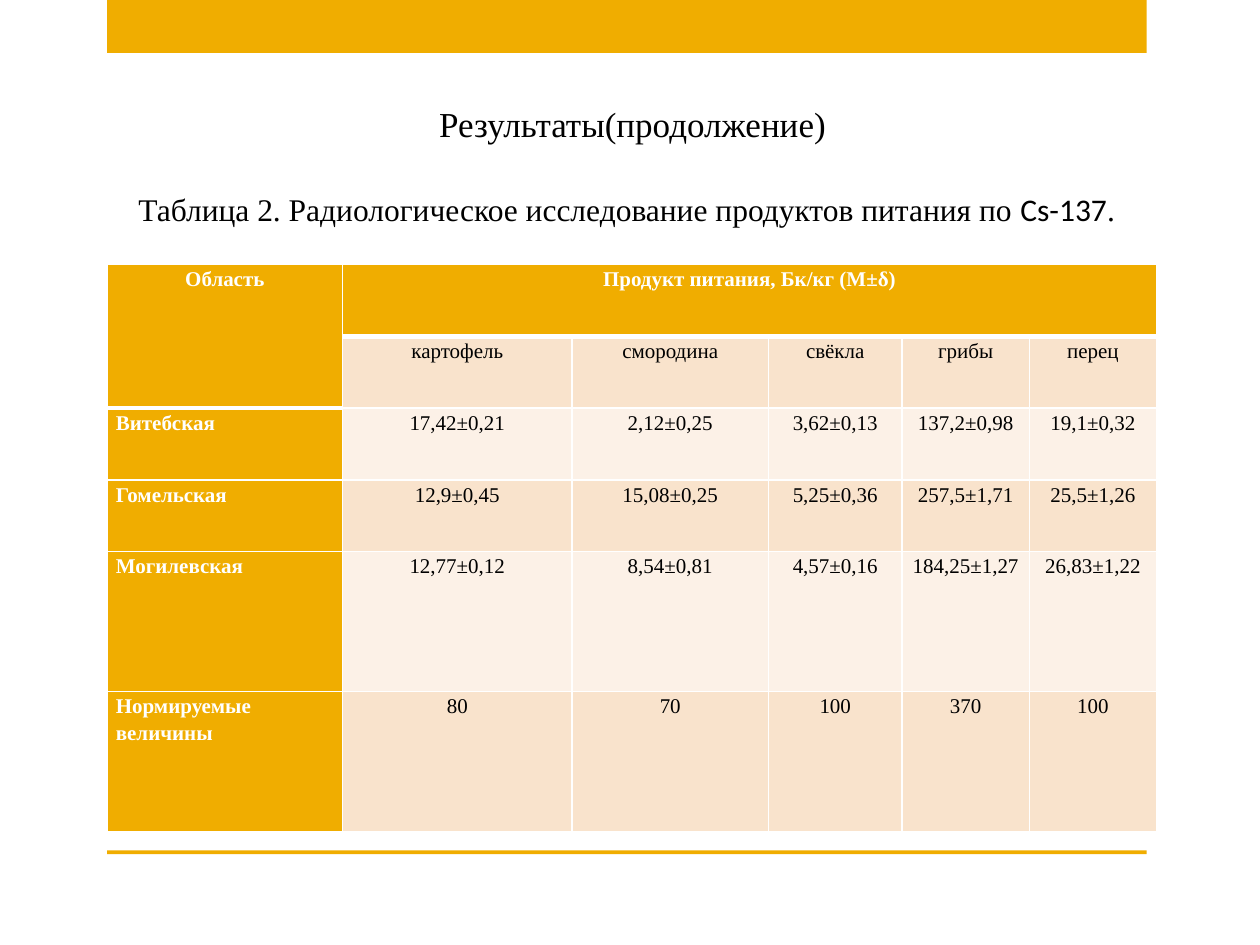
"""Build a slide with a table of radiological test results for food products."""
from lxml import etree
from pptx import Presentation
from pptx.dml.color import RGBColor
from pptx.enum.shapes import MSO_SHAPE
from pptx.enum.text import MSO_ANCHOR, MSO_AUTO_SIZE, PP_ALIGN
from pptx.oxml.ns import qn
from pptx.util import Inches, Pt

RECTANGLE = MSO_SHAPE.RECTANGLE
TOP, MIDDLE = MSO_ANCHOR.TOP, MSO_ANCHOR.MIDDLE
CENTER, JUSTIFY = PP_ALIGN.CENTER, PP_ALIGN.JUSTIFY
FIT_SHAPE = MSO_AUTO_SIZE.SHAPE_TO_FIT_TEXT

SERIF, SANS = "Times New Roman", "Calibri"
GOLD, BLACK, WHITE = "F0AD00", "000000", "FFFFFF"
BANDS = ("FCF1E7", "F9E3CC")
LEFT = 0.85

COLUMN_WIDTHS = (1.87, 1.82, 1.56, 1.06, 1.01, 1.01)
ROW_HEIGHTS = (0.57, 0.57, 0.57, 0.57, 1.11, 1.11)
ROWS = (
    ("Область", "Продукт питания, Бк/кг (М±δ)", "", "", "", ""),
    ("", "картофель", "смородина", "свёкла", "грибы", "перец"),
    ("Витебская", "17,42±0,21", "2,12±0,25", "3,62±0,13", "137,2±0,98", "19,1±0,32"),
    ("Гомельская", "12,9±0,45", "15,08±0,25", "5,25±0,36", "257,5±1,71", "25,5±1,26"),
    ("Могилевская", "12,77±0,12", "8,54±0,81", "4,57±0,16", "184,25±1,27", "26,83±1,22"),
    ("Нормируемые величины", "80", "70", "100", "370", "100"),
)


def color(value):
    """Return the colour for a hex string."""
    return RGBColor.from_string(value)


def add_text(paragraph, text, *, size, font=SERIF, fill=BLACK, bold=False,
             align=CENTER, spacing=None):
    """Append a formatted run to a paragraph."""
    paragraph.alignment = align
    paragraph.line_spacing = spacing
    run = paragraph.add_run()
    run.text = text
    run.font.name = font
    run.font.size = Pt(size)
    run.font.bold = bold
    run.font.color.rgb = color(fill)


def add_bar(slide, top, height):
    """Draw a gold bar across the content width."""
    shape = slide.shapes.add_shape(
        RECTANGLE, Inches(LEFT), Inches(top), Inches(8.25), Inches(height))
    shape.shadow.inherit = False
    shape.fill.solid()
    shape.fill.fore_color.rgb = color(GOLD)
    shape.line.fill.background()


def add_title(slide, text):
    """Place and fill the title placeholder."""
    title = slide.shapes.title
    title.left, title.top = Inches(2.52), Inches(0.76)
    title.width, title.height = Inches(5), Inches(0.44)
    frame = title.text_frame
    frame.vertical_anchor = TOP
    frame.auto_size = FIT_SHAPE
    add_text(frame.paragraphs[0], text, size=20)


def add_caption(slide, parts):
    """Add the table caption from pairs of text and font."""
    box = slide.shapes.add_textbox(Inches(1), Inches(1.46), Inches(8.03), Inches(0.4))
    frame = box.text_frame
    frame.word_wrap = False
    frame.auto_size = FIT_SHAPE
    frame.vertical_anchor = MIDDLE
    for text, font in parts:
        add_text(frame.paragraphs[0], text, size=18, font=font, align=JUSTIFY)


def set_borders(cell, top, bottom):
    """Give a cell white borders with the given top and bottom widths."""
    properties = cell._tc.get_or_add_tcPr()
    widths = {"a:lnL": 1, "a:lnR": 1, "a:lnT": top, "a:lnB": bottom}
    for index, (tag, width) in enumerate(widths.items()):
        line = etree.Element(qn(tag), w=str(Pt(width)))
        fill = etree.SubElement(line, qn("a:solidFill"))
        etree.SubElement(fill, qn("a:srgbClr"), val=WHITE)
        properties.insert(index, line)


def format_cell(cell, text, row, column):
    """Fill, border and label one cell according to its place."""
    is_header = row == 0 or column == 0
    header_end = 1 if column == 0 else 0
    cell.margin_left = cell.margin_right = Inches(0.07)
    cell.margin_top = cell.margin_bottom = 0
    cell.fill.solid()
    cell.fill.fore_color.rgb = color(GOLD if is_header else BANDS[row % 2])
    set_borders(cell, top=3 if row == header_end + 1 else 1,
                bottom=3 if row in (0, header_end) else 1)
    if text:
        add_text(cell.text_frame.paragraphs[0], text, size=12, bold=is_header,
                 fill=WHITE if is_header else BLACK, spacing=1.15,
                 align=JUSTIFY if column == 0 and row > 1 else CENTER)


def add_results_table(slide):
    """Add the table of measured values by region and product."""
    table = slide.shapes.add_table(
        len(ROWS), len(COLUMN_WIDTHS), Inches(LEFT), Inches(2.1),
        Inches(sum(COLUMN_WIDTHS)), Inches(sum(ROW_HEIGHTS))).table
    for column, width in zip(table.columns, COLUMN_WIDTHS):
        column.width = Inches(width)
    for row, height in zip(table.rows, ROW_HEIGHTS):
        row.height = Inches(height)
    table.cell(0, 0).merge(table.cell(1, 0))
    table.cell(0, 1).merge(table.cell(0, len(COLUMN_WIDTHS) - 1))
    for row, texts in enumerate(ROWS):
        for column, text in enumerate(texts):
            format_cell(table.cell(row, column), text, row, column)


def main():
    """Build and save the presentation."""
    presentation = Presentation()
    presentation.slide_width, presentation.slide_height = Inches(10), Inches(7.5)
    slide = presentation.slides.add_slide(presentation.slide_layouts[5])
    add_bar(slide, top=0, height=0.42)
    add_bar(slide, top=6.75, height=0.03)
    add_title(slide, "Результаты(продолжение)")
    add_results_table(slide)
    add_caption(slide, (
        ("Таблица 2. Радиологическое исследование продуктов питания по ", SERIF),
        ("Cs-137", SANS),
        (".", SERIF),
    ))
    presentation.save("out.pptx")


if __name__ == "__main__":
    main()
